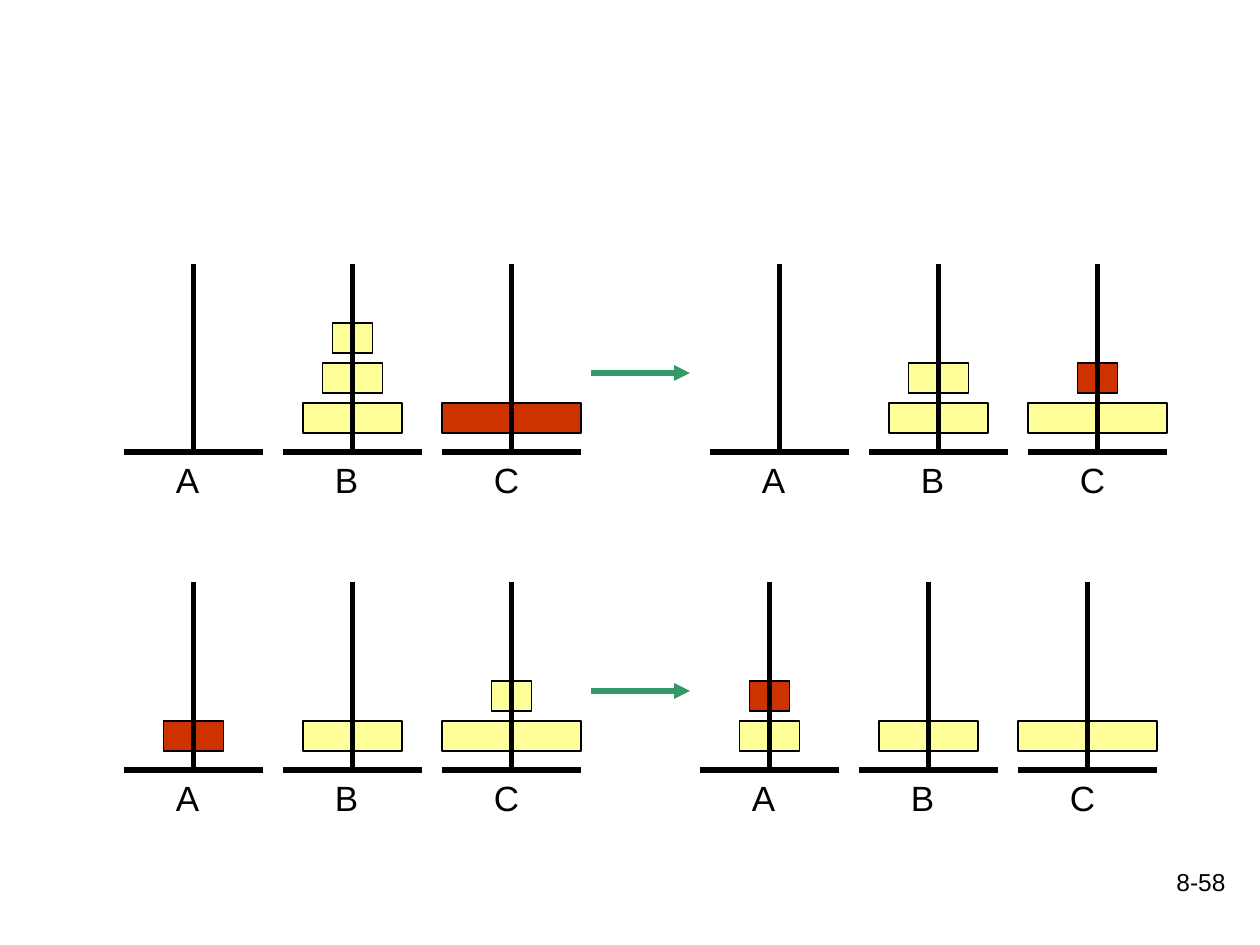
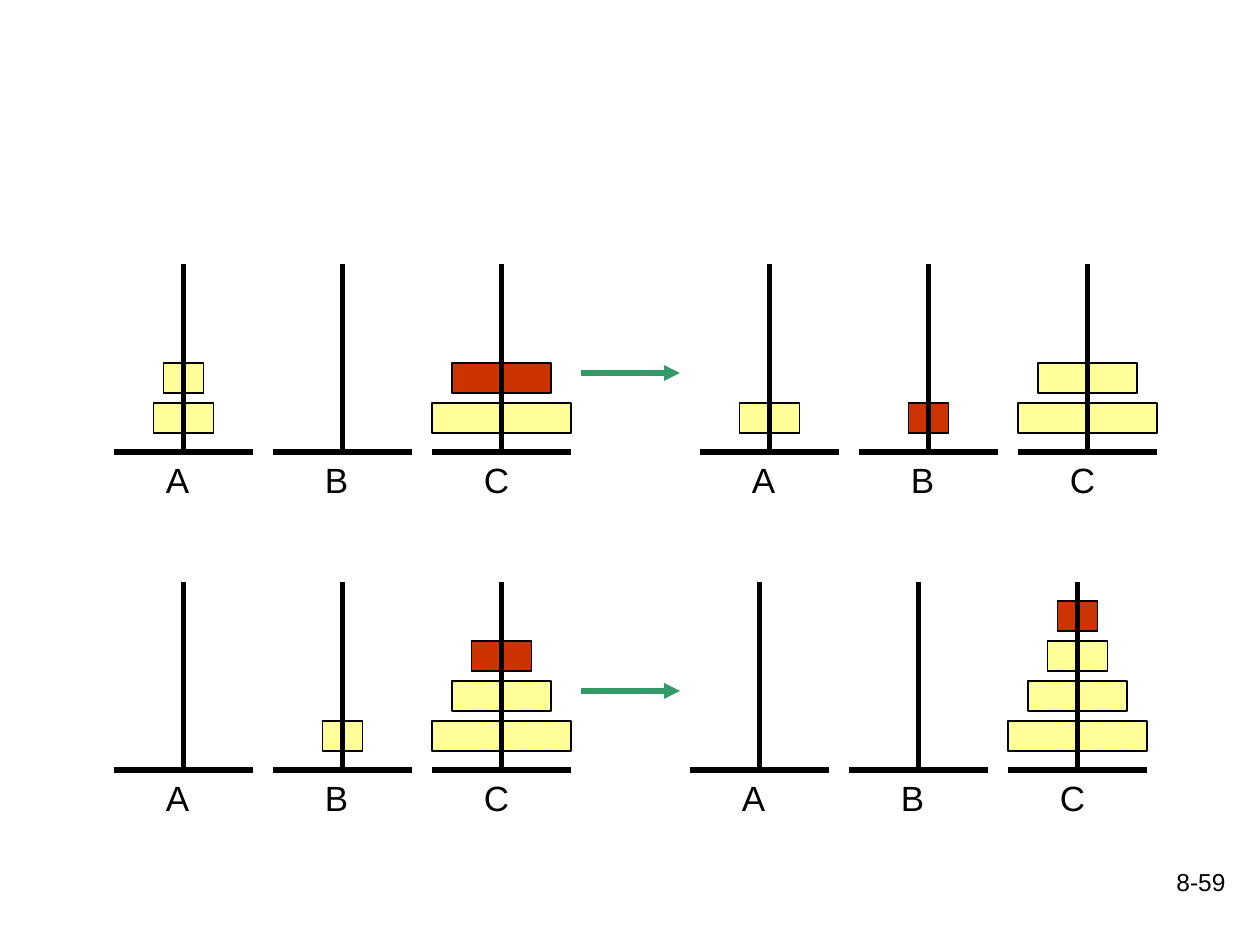
import dataclasses

import lxml.etree
import pptx
import pptx.dml.color
import pptx.enum.shapes
import pptx.enum.text
import pptx.oxml.ns
import pptx.util

EMU_PER_PX = 914400 / 126
SLIDE_WIDTH, SLIDE_HEIGHT = 1260, 945

# Geometry of one set of three pegs
PEG_NAMES = "ABC"
PEG_PITCH = 159
BASE_WIDTH = 139
POLE_HEIGHT = 188
DISK_WIDTHS = {1: 40, 2: 60, 3: 99, 4: 139}
DISK_HEIGHT = 30
DISK_PITCH = 40
LOWEST_DISK_RISE = 49
LABEL_WIDTH, LABEL_HEIGHT = 60, 54

# Geometry of one move: two sets of pegs with an arrow between them
ARROW_OFFSET, ARROW_DROP, ARROW_LENGTH = 467, 109, 99
ROW_TOPS = (264, 582)


@dataclasses.dataclass(frozen=True)
class Theme:
    font: str = "Arial"
    ink: str = "000000"
    disk: str = "FFFF99"
    moving_disk: str = "CC3300"
    arrow: str = "339966"
    label_size: int = 20
    number_size: int = 14
    heavy_line: float = 3
    thin_line: float = 0.75


@dataclasses.dataclass(frozen=True)
class State:
    """Disks on pegs A, B and C from the bottom up, and the red disk."""
    pegs: tuple
    moving: int


THEME = Theme()

# Each slide: page number, left edge, and per row (left of second set, before, after)
SLIDES = (
    ("8-58", 124, (
        (710, State(((), (3, 2, 1), (4,)), 4), State(((), (3, 2), (4, 1)), 1)),
        (700, State(((2,), (3,), (4, 1)), 2), State(((2, 1), (3,), (4,)), 1)),
    )),
    ("8-59", 114, (
        (700, State(((2, 1), (), (4, 3)), 3), State(((2,), (1,), (4, 3)), 1)),
        (690, State(((), (1,), (4, 3, 2)), 2), State(((), (), (4, 3, 2, 1)), 1)),
    )),
)


def px(length):
    return pptx.util.Emu(round(length * EMU_PER_PX))


def color(value):
    return pptx.dml.color.RGBColor.from_string(value)


def add_line(slide, start, end, line_color):
    connector = slide.shapes.add_connector(
        pptx.enum.shapes.MSO_CONNECTOR.STRAIGHT, *map(px, start + end))
    connector.line.color.rgb = color(line_color)
    connector.line.width = pptx.util.Pt(THEME.heavy_line)
    properties = connector._element.spPr
    lxml.etree.SubElement(properties, pptx.oxml.ns.qn("a:effectLst"))
    return connector


def add_text(slide, box, text, size):
    shape = slide.shapes.add_textbox(*map(px, box))
    shape.text_frame.word_wrap = True
    paragraph = shape.text_frame.paragraphs[0]
    paragraph.text = text
    paragraph.font.name = THEME.font
    paragraph.font.size = pptx.util.Pt(size)
    paragraph.font.color.rgb = color(THEME.ink)
    return shape


def add_disk(slide, center, top, size, moving):
    width = DISK_WIDTHS[size]
    shape = slide.shapes.add_shape(
        pptx.enum.shapes.MSO_SHAPE.RECTANGLE,
        px(center - width / 2), px(top), px(width), px(DISK_HEIGHT))
    shape.shadow.inherit = False
    shape.fill.solid()
    shape.fill.fore_color.rgb = color(THEME.moving_disk if moving else THEME.disk)
    shape.line.color.rgb = color(THEME.ink)
    shape.line.width = pptx.util.Pt(THEME.thin_line)


def add_peg_label(slide, center, top, name):
    box = (center - LABEL_WIDTH / 2, top, LABEL_WIDTH, LABEL_HEIGHT)
    label = add_text(slide, box, name, THEME.label_size)
    label.text_frame.auto_size = pptx.enum.text.MSO_AUTO_SIZE.SHAPE_TO_FIT_TEXT
    # Space before as half a line
    properties = label.text_frame.paragraphs[0]._p.get_or_add_pPr()
    spacing = lxml.etree.Element(pptx.oxml.ns.qn("a:spcBef"))
    lxml.etree.SubElement(spacing, pptx.oxml.ns.qn("a:spcPct"), val="50000")
    properties.insert(0, spacing)


def add_peg(slide, left, top, name, disks, moving):
    center = left + BASE_WIDTH / 2
    base = top + POLE_HEIGHT
    # Disks lie behind the pole
    for level, size in enumerate(disks):
        disk_top = base - LOWEST_DISK_RISE - level * DISK_PITCH
        add_disk(slide, center, disk_top, size, size == moving)
    add_line(slide, (center, top), (center, base), THEME.ink)
    add_line(slide, (left, base), (left + BASE_WIDTH, base), THEME.ink)
    add_peg_label(slide, center, base, name)


def add_state(slide, left, top, state):
    for index, (name, disks) in enumerate(zip(PEG_NAMES, state.pegs)):
        add_peg(slide, left + index * PEG_PITCH, top, name, disks, state.moving)


def add_move_arrow(slide, left, top):
    arrow = add_line(slide, (left, top), (left + ARROW_LENGTH, top), THEME.arrow)
    line = arrow.line._get_or_add_ln()
    lxml.etree.SubElement(line, pptx.oxml.ns.qn("a:tailEnd"), type="triangle")


def add_move(slide, left, top, second_left, before, after):
    add_state(slide, left, top, before)
    add_state(slide, second_left, top, after)
    add_move_arrow(slide, left + ARROW_OFFSET, top + ARROW_DROP)


def add_page_number(slide, number):
    shape = add_text(slide, (976, 861, 262, 63), number, THEME.number_size)
    shape.text_frame.paragraphs[0].alignment = pptx.enum.text.PP_ALIGN.RIGHT


def add_moves_slide(presentation, number, left, moves):
    slide = presentation.slides.add_slide(presentation.slide_layouts[6])
    add_page_number(slide, number)
    for top, move in zip(ROW_TOPS, moves):
        add_move(slide, left, top, *move)


def main():
    presentation = pptx.Presentation()
    presentation.slide_width = px(SLIDE_WIDTH)
    presentation.slide_height = px(SLIDE_HEIGHT)
    for number, left, moves in SLIDES:
        add_moves_slide(presentation, number, left, moves)
    presentation.save("out.pptx")


if __name__ == "__main__":
    main()
